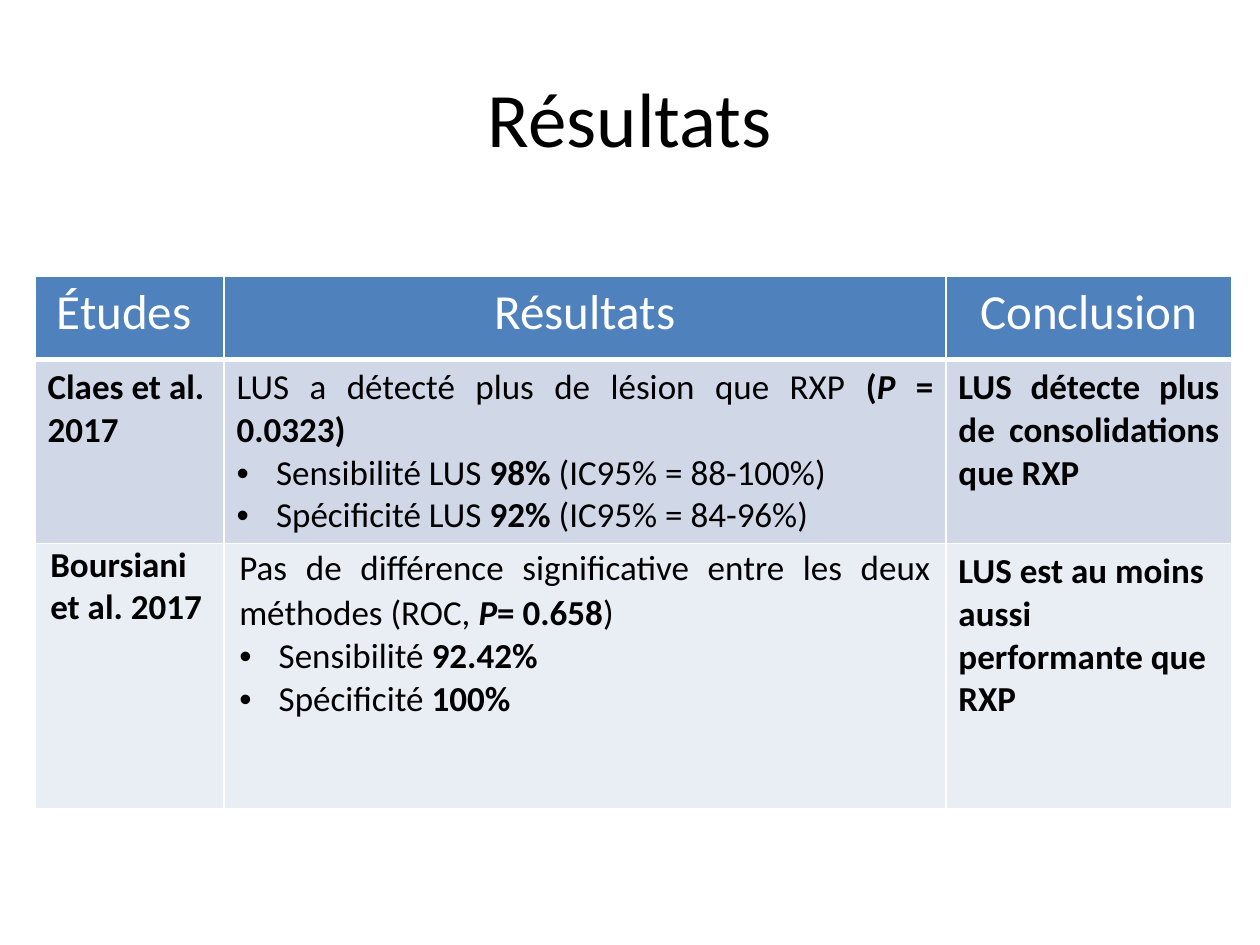
from lxml import etree
from pptx import Presentation
from pptx.dml.color import RGBColor
from pptx.enum import text as t
from pptx.oxml import ns
from pptx.util import Pt

BLACK = RGBColor(0x00, 0x00, 0x00)
WHITE = RGBColor(0xFF, 0xFF, 0xFF)
HEADER_BLUE = RGBColor(0x4F, 0x81, 0xBD)
ROW_BLUE = RGBColor(0xD0, 0xD8, 0xE8)
ROW_PALE = RGBColor(0xE9, 0xED, 0xF4)

FONT = "Calibri"
LEFT, CENTER, JUSTIFY = t.PP_ALIGN.LEFT, t.PP_ALIGN.CENTER, t.PP_ALIGN.JUSTIFY
BULLET_INDENT = Pt(22.5)
COLUMN_WIDTHS = (108, 412.5, 163.5)
ROW_HEIGHTS = (47.5, 105, 151.5)
ROW_FILLS = (HEADER_BLUE, ROW_BLUE, ROW_PALE)
TIGHT_MARGINS = {"margin_left": Pt(8.75), "margin_right": Pt(8.75),
                 "margin_top": 0, "margin_bottom": 0}


def para(*runs, bullet=False, **layout):
    """Describe a paragraph; each run is (text, style), style holding b and/or i."""
    return {"runs": runs, "bullet": bullet, "layout": {"alignment": LEFT, **layout}}


def heading(label):
    return {"paragraphs": [para((label, ""), alignment=CENTER)]}


CONTENT = [
    [heading("Études "), heading("Résultats"), heading("Conclusion")],
    [
        {"paragraphs": [para(("Claes et al. 2017", "b"))]},
        {"paragraphs": [
            para(("LUS a détecté plus de lésion que RXP ", ""), ("(", "b"),
                 ("P", "bi"), (" = 0.0323)", "b"), alignment=JUSTIFY),
            para(("Sensibilité LUS ", ""), ("98% ", "b"),
                 ("(IC95% = 88-100%)", ""), bullet=True),
            para(("Spécificité LUS ", ""), ("92% ", "b"),
                 ("(IC95% = 84-96%)", ""), bullet=True),
        ]},
        {"paragraphs": [para(("LUS détecte plus de consolidations que RXP", "b"),
                             alignment=JUSTIFY)]},
    ],
    [
        {"paragraphs": [para(("Boursiani et al. 2017", "b"))],
         "margins": TIGHT_MARGINS},
        {"paragraphs": [
            para(("Pas de différence significative entre les deux méthodes (ROC, ", ""),
                 ("P", "bi"), ("= 0.658", "b"), (")", ""),
                 alignment=JUSTIFY, line_spacing=1.07),
            para(("Sensibilité ", ""), ("92.42%", "b"), bullet=True),
            para(("Spécificité ", ""), ("100%", "b"), bullet=True),
        ], "margins": TIGHT_MARGINS},
        {"paragraphs": [para(("LUS est au moins aussi performante que RXP", "b"))]},
    ],
]


def apply(target, formats):
    for name, value in formats.items():
        setattr(target, name, value)


def format_font(font, size, color, style=""):
    apply(font, {"name": FONT, "size": Pt(size), "bold": "b" in style,
                 "italic": "i" in style})
    font.color.rgb = color


def add_bullet(paragraph):
    properties = paragraph._p.get_or_add_pPr()
    properties.set("marL", str(BULLET_INDENT))
    properties.set("indent", str(-BULLET_INDENT))
    etree.SubElement(properties, ns.qn("a:buFont"), typeface="Arial")
    etree.SubElement(properties, ns.qn("a:buChar"), char="•")


def add_borders(cell, top, bottom):
    """Draw white cell borders; must run before the fill is set."""
    properties = cell._tc.get_or_add_tcPr()
    for side, width in {"L": 1, "R": 1, "T": top, "B": bottom}.items():
        line = etree.SubElement(properties, ns.qn(f"a:ln{side}"), w=str(Pt(width)))
        fill = etree.SubElement(line, ns.qn("a:solidFill"))
        etree.SubElement(fill, ns.qn("a:srgbClr"), val=str(WHITE))


def write_cell(cell, content, size, color):
    apply(cell, content.get("margins", {}))
    frame = cell.text_frame
    for index, source in enumerate(content["paragraphs"]):
        paragraph = frame.add_paragraph() if index else frame.paragraphs[0]
        apply(paragraph, source["layout"])
        if source["bullet"]:
            add_bullet(paragraph)
        for words, style in source["runs"]:
            run = paragraph.add_run()
            run.text = words
            format_font(run.font, size, color, style)


def add_title(slide, words):
    title = slide.shapes.title
    apply(title, {"left": Pt(36), "top": Pt(21.6), "width": Pt(648), "height": Pt(90)})
    title.text_frame.vertical_anchor = t.MSO_ANCHOR.MIDDLE
    paragraph = title.text_frame.paragraphs[0]
    paragraph.text = words
    paragraph.alignment = CENTER
    format_font(paragraph.runs[0].font, 44, BLACK)


def add_studies_table(slide):
    table = slide.shapes.add_table(
        len(ROW_HEIGHTS), len(COLUMN_WIDTHS), Pt(20), Pt(158),
        Pt(sum(COLUMN_WIDTHS)), Pt(sum(ROW_HEIGHTS))).table
    for column, width in zip(table.columns, COLUMN_WIDTHS):
        column.width = Pt(width)
    for index, (row, height) in enumerate(zip(table.rows, ROW_HEIGHTS)):
        row.height = Pt(height)
        is_header = index == 0
        size, color = (28, WHITE) if is_header else (20, BLACK)
        for cell, content in zip(row.cells, CONTENT[index]):
            add_borders(cell, top=3 if index == 1 else 1, bottom=3 if is_header else 1)
            cell.fill.solid()
            cell.fill.fore_color.rgb = ROW_FILLS[index]
            write_cell(cell, content, size, color)


def main():
    deck = Presentation()
    apply(deck, {"slide_width": Pt(720), "slide_height": Pt(540)})
    slide = deck.slides.add_slide(deck.slide_layouts[5])
    add_title(slide, "Résultats")
    add_studies_table(slide)
    deck.save("out.pptx")


if __name__ == "__main__":
    main()
